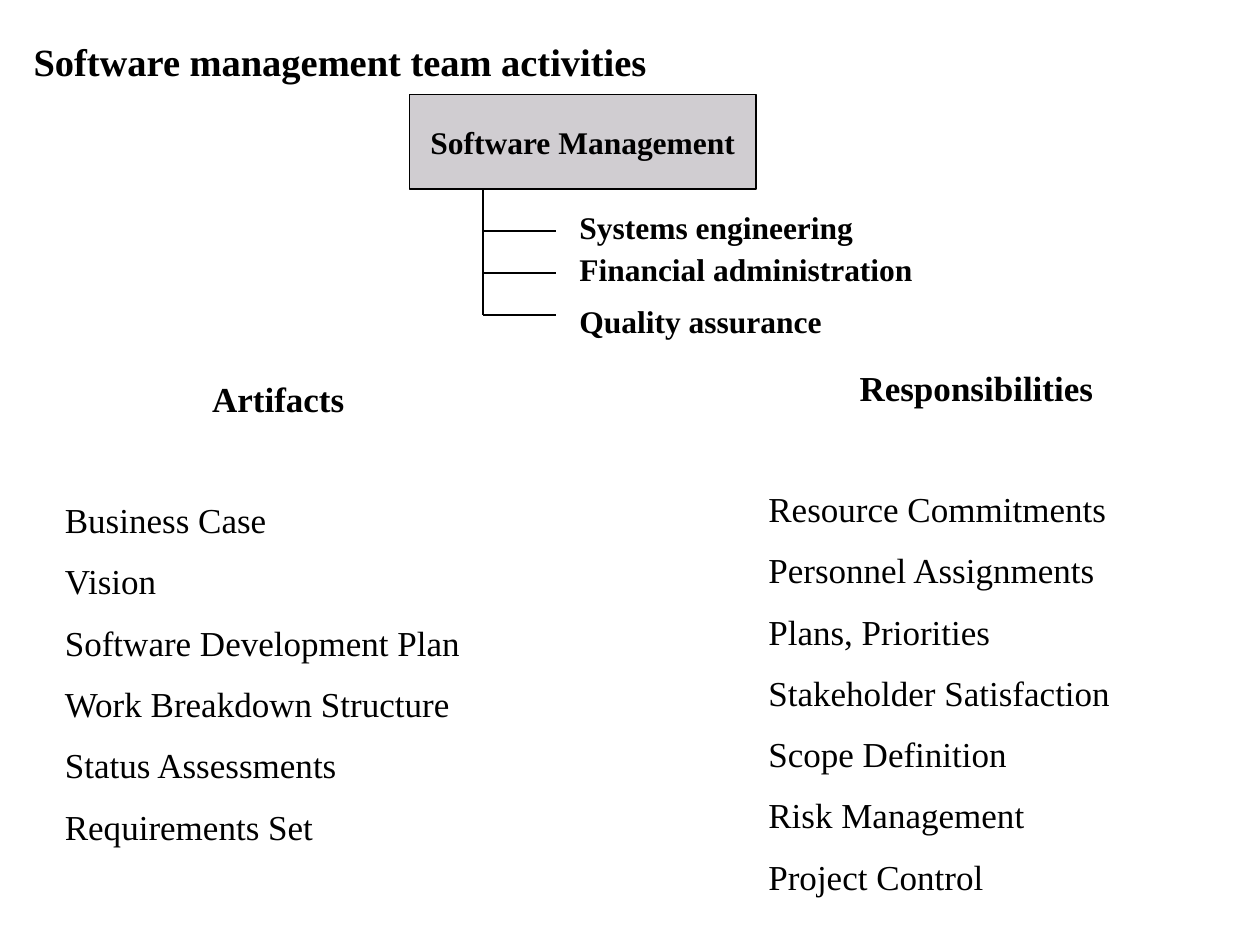
from pptx import Presentation
from pptx.dml.color import RGBColor
from pptx.enum.shapes import MSO_CONNECTOR, MSO_SHAPE
from pptx.enum.text import MSO_ANCHOR, MSO_AUTO_SIZE, PP_ALIGN
from pptx.oxml.ns import qn
from pptx.util import Pt
from lxml import etree

LEFT, CENTER = PP_ALIGN.LEFT, PP_ALIGN.CENTER
TOP, MIDDLE = MSO_ANCHOR.TOP, MSO_ANCHOR.MIDDLE
NO_AUTOFIT = MSO_AUTO_SIZE.NONE
STRAIGHT = MSO_CONNECTOR.STRAIGHT
RECTANGLE = MSO_SHAPE.RECTANGLE
TITLE_ONLY = 5

THEME = {
    "font": "Times New Roman",
    "ink": RGBColor(0, 0, 0),
    "box": RGBColor(0xD0, 0xCD, 0xD1),
    "title": Pt(22),
    "label": Pt(18),
    "list": Pt(20),
    "line": Pt(0.75),
}


def write(shape, lines, size, anchor=TOP, wrap=True):
    """Fill a shape with lines of (text, bold, alignment, points before)."""
    frame = shape.text_frame
    for name, value in {"word_wrap": wrap, "vertical_anchor": anchor,
                        "auto_size": NO_AUTOFIT}.items():
        setattr(frame, name, value)
    for index, (text, bold, alignment, before) in enumerate(lines):
        paragraph = frame.add_paragraph() if index else frame.paragraphs[0]
        paragraph.alignment = alignment
        paragraph.space_before = Pt(before)
        run = paragraph.add_run()
        run.text = text
        run.font.color.rgb = THEME["ink"]
        for name, value in {"name": THEME["font"], "size": size, "bold": bold}.items():
            setattr(run.font, name, value)


def draw_line(x1, y1, x2, y2):
    connector = slide.shapes.add_connector(STRAIGHT, Pt(x1), Pt(y1), Pt(x2), Pt(y2))
    connector.line.color.rgb = THEME["ink"]
    connector.line.width = THEME["line"]
    etree.SubElement(connector._element.spPr, qn("a:effectLst"))


presentation = Presentation()
presentation.slide_width, presentation.slide_height = Pt(720), Pt(540)
slide = presentation.slides.add_slide(presentation.slide_layouts[TITLE_ONLY])

# Title
title = slide.shapes.title
for name, value in {"left": 12, "top": 18, "width": 696, "height": 36}.items():
    setattr(title, name, Pt(value))
write(title, [("Software management team activities", True, LEFT, 0)], THEME["title"])

# Management box
box = slide.shapes.add_shape(RECTANGLE, Pt(234), Pt(54), Pt(198), Pt(54))
box.shadow.inherit = False
box.fill.solid()
box.fill.fore_color.rgb = THEME["box"]
box.line.color.rgb = THEME["ink"]
box.line.width = THEME["line"]
write(box, [("Software Management", True, CENTER, 0)], THEME["label"], MIDDLE, wrap=False)

# Tree of activities: a trunk with evenly spaced branches
trunk_x, trunk_top, branch_gap = 276, 108, 24
activities = [
    ("Systems engineering", 115.2, 202),
    ("Financial administration", 139.2, 222),
    ("Quality assurance", 169.2, 156),
]
draw_line(trunk_x, trunk_top, trunk_x, trunk_top + branch_gap * len(activities))
for number, (activity, label_top, width) in enumerate(activities, start=1):
    branch_y = trunk_top + branch_gap * number
    draw_line(trunk_x, branch_y, trunk_x + 42, branch_y)
    label = slide.shapes.add_textbox(Pt(324), Pt(label_top), Pt(width), Pt(28.8))
    write(label, [(activity, True, LEFT, 0)], THEME["label"])

# Two lists, each under a centred heading
columns = [
    ("Artifacts", (30, 212.4, 258, 286),
     ["Business Case", "Vision", "Software Development Plan",
      "Work Breakdown Structure", "Status Assessments", "Requirements Set"]),
    ("Responsibilities", (432, 206, 252, 322),
     ["Resource Commitments", "Personnel Assignments", "Plans, Priorities",
      "Stakeholder Satisfaction", "Scope Definition", "Risk Management",
      "Project Control"]),
]
HEADING_GAP, ITEM_GAP = 45, 11
for heading, bounds, items in columns:
    column = slide.shapes.add_textbox(*map(Pt, bounds))
    lines = [(heading, True, CENTER, 0)]
    for index, item in enumerate(items):
        lines.append((item, False, LEFT, ITEM_GAP if index else HEADING_GAP))
    write(column, lines, THEME["list"])

presentation.save("out.pptx")
